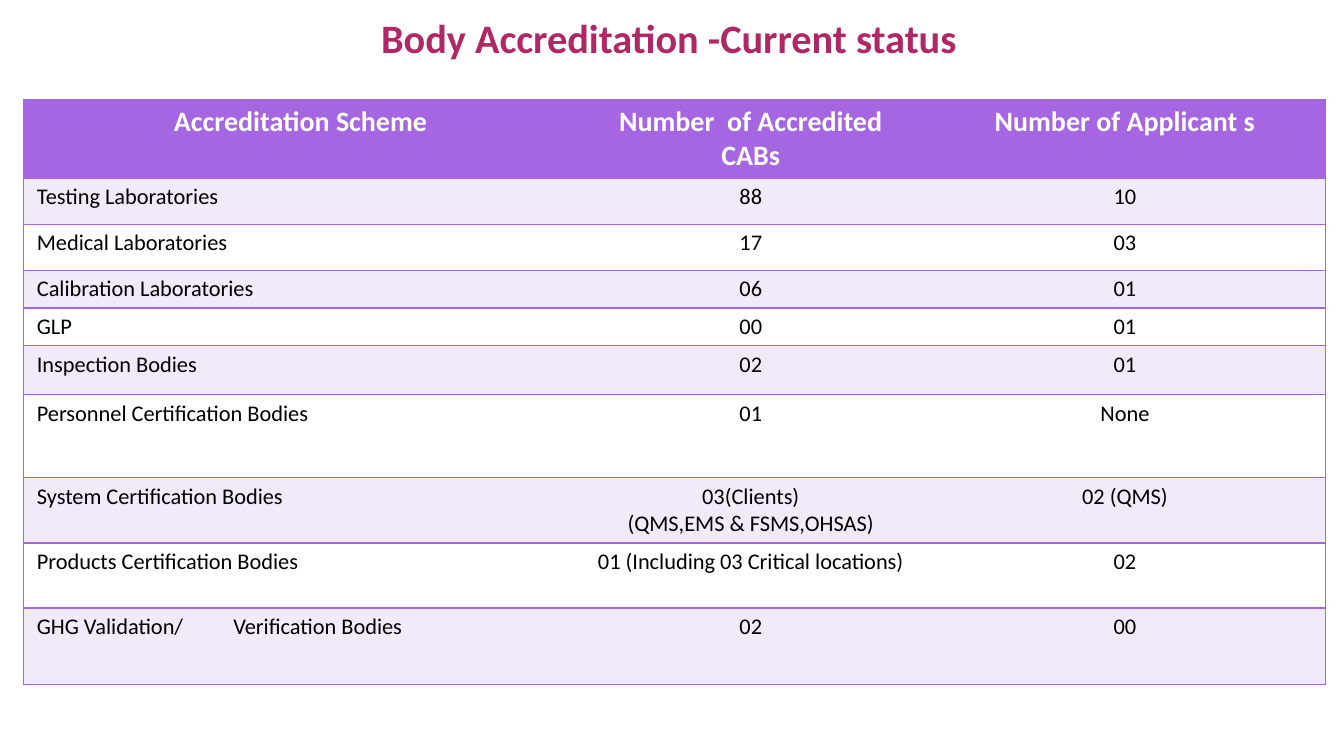
from lxml.etree import SubElement
from pptx import Presentation
from pptx.dml.color import RGBColor
from pptx.enum.text import MSO_ANCHOR, PP_ALIGN
from pptx.oxml.ns import qn
from pptx.util import Cm, Pt

PURPLE, LILAC, WHITE, BLACK, MAGENTA = "A666E1", "F1EAF9", "FFFFFF", "000000", "AF2764"


def style_paragraph(para, color, size, bold, align):
    para.alignment = align
    for name, value in {"name": "Calibri", "size": Pt(size), "bold": bold}.items():
        setattr(para.font, name, value)
    para.font.color.rgb = RGBColor.from_string(color)


def add_border(cell, side, color):
    """Draw one side of a cell, or hide it when color is None."""
    line = SubElement(cell._tc.get_or_add_tcPr(), qn(f"a:ln{side}"), w=str(Pt(1)))
    if color:
        SubElement(SubElement(line, qn("a:solidFill")), qn("a:srgbClr"), val=color)
    else:
        SubElement(line, qn("a:noFill"))


deck = Presentation()
deck.slide_width, deck.slide_height = Cm(33.87), Cm(19.05)
page = deck.slides.add_slide(deck.slide_layouts[5])

# Title
title = page.shapes.title
title_place = {"left": 1.62, "top": 0.33, "width": 30.48, "height": 1.22}
for name, value in title_place.items():
    setattr(title, name, Cm(value))
title.text_frame.text = "Body Accreditation -Current status"
title.text_frame.vertical_anchor = MSO_ANCHOR.MIDDLE
style_paragraph(title.text_frame.paragraphs[0], MAGENTA, 28.8, True, PP_ALIGN.CENTER)

# Accreditation table: row height in cm, then the three cells
rows = [
    (1.99, "Accreditation Scheme", "Number  of Accredited CABs", "Number of Applicant s"),
    (1.16, "Testing Laboratories", "88", "10"),
    (1.16, "Medical Laboratories", "17", "03"),
    (0.95, "Calibration Laboratories", "06", "01"),
    (0.94, "GLP", "00", "01"),
    (1.23, "Inspection Bodies", "02", "01"),
    (2.1, "Personnel Certification Bodies", "01", "None"),
    (1.64, "System Certification Bodies", "03(Clients)\n(QMS,EMS & FSMS,OHSAS)", "02 (QMS)"),
    (1.64, "Products Certification Bodies", "01 (Including 03 Critical locations)", "02"),
    (1.92, "GHG Validation/\tVerification Bodies", "02", "00"),
]
column_widths = [13.95, 8.74, 10.12]
cell_margins = {"margin_left": 0.33, "margin_right": 0.33,
                "margin_top": 0.13, "margin_bottom": 0.13}
last_column = len(column_widths) - 1

table = page.shapes.add_table(
    len(rows), len(column_widths), Cm(0.6), Cm(2.5),
    Cm(sum(column_widths)), Cm(sum(row[0] for row in rows))).table
for column, width in zip(table.columns, column_widths):
    column.width = Cm(width)

for row_index, (height, *texts) in enumerate(rows):
    table.rows[row_index].height = Cm(height)
    header = row_index == 0
    fill = PURPLE if header else LILAC if row_index % 2 else WHITE
    for column_index, text in enumerate(texts):
        cell = table.cell(row_index, column_index)
        cell.text = text
        for name, value in cell_margins.items():
            setattr(cell, name, Cm(value))
        add_border(cell, "L", PURPLE if column_index == 0 else None)
        add_border(cell, "R", PURPLE if column_index == last_column else None)
        add_border(cell, "T", PURPLE)
        add_border(cell, "B", PURPLE)
        cell.fill.solid()
        cell.fill.fore_color.rgb = RGBColor.from_string(fill)
        align = PP_ALIGN.CENTER if header or column_index else PP_ALIGN.LEFT
        for para in cell.text_frame.paragraphs:
            style_paragraph(para, WHITE if header else BLACK,
                            20 if header else 16, header, align)

# Tab stop between the two parts of the last scheme name
scheme_para = table.cell(len(rows) - 1, 0).text_frame.paragraphs[0]
properties = scheme_para._p.get_or_add_pPr()
tab_list = properties.makeelement(qn("a:tabLst"))
properties.insert(0, tab_list)
SubElement(tab_list, qn("a:tab"), pos=str(Cm(4.95)), algn="l")

deck.save("out.pptx")
